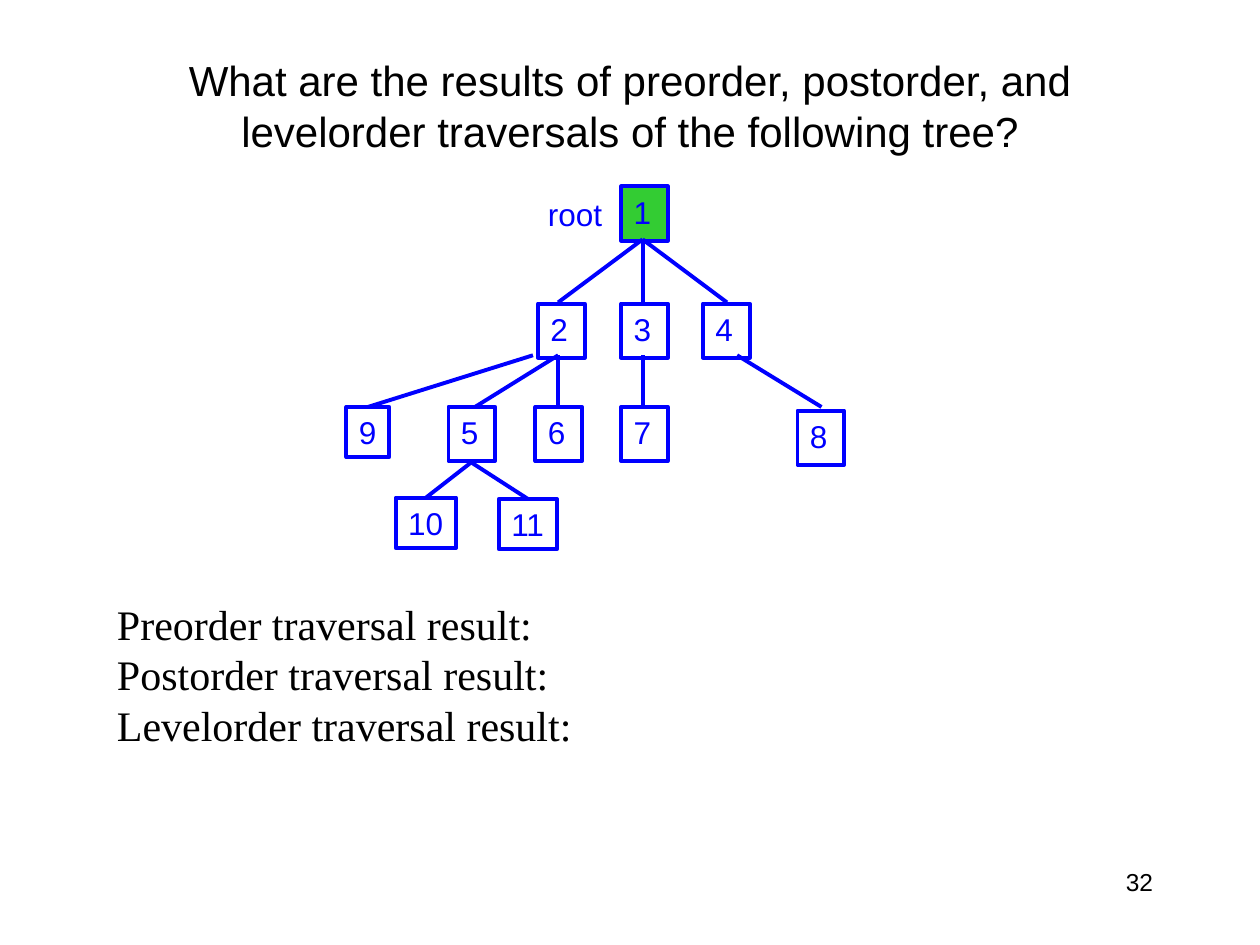
from pptx import Presentation
from pptx.dml.color import RGBColor
from pptx.enum.shapes import MSO_CONNECTOR, MSO_SHAPE
from pptx.enum.text import MSO_ANCHOR, MSO_AUTO_SIZE, PP_ALIGN
from pptx.oxml.ns import qn
from pptx.util import Inches, Pt

RECT = MSO_SHAPE.RECTANGLE
STRAIGHT = MSO_CONNECTOR.STRAIGHT
TOP, MIDDLE = MSO_ANCHOR.TOP, MSO_ANCHOR.MIDDLE
GROW, FIXED = MSO_AUTO_SIZE.SHAPE_TO_FIT_TEXT, MSO_AUTO_SIZE.NONE
LEFT, CENTER, RIGHT = PP_ALIGN.LEFT, PP_ALIGN.CENTER, PP_ALIGN.RIGHT

COLORS = {"text": "000000", "tree": "0000FF", "root": "33CC33"}
SANS, SERIF = "Arial", "Times New Roman"
NODE_W, NODE_H, SMALL_H = 0.37, 0.43, 0.4

NODES = [
    ("1", 4.93, 1.48, NODE_W, NODE_H),
    ("2", 4.27, 2.41, NODE_W, NODE_H),
    ("3", 4.93, 2.41, NODE_W, NODE_H),
    ("4", 5.58, 2.41, NODE_W, NODE_H),
    ("5", 3.56, 3.23, NODE_W, NODE_H),
    ("6", 4.25, 3.23, NODE_W, NODE_H),
    ("7", 4.93, 3.23, NODE_W, NODE_H),
    ("8", 6.33, 3.26, NODE_W, NODE_H),
    ("9", 2.75, 3.23, 0.34, SMALL_H),
    ("10", 3.14, 3.95, 0.48, SMALL_H),
    ("11", 3.96, 3.96, 0.46, SMALL_H),
]

BRANCHES = [
    ((5.1, 1.9), [(4.43, 2.4), (5.1, 2.4), (5.77, 2.4)]),
    ((4.23, 2.82), [(2.92, 3.23)]),
    ((4.43, 2.82), [(3.77, 3.23), (4.43, 3.23)]),
    ((5.1, 2.82), [(5.1, 3.23)]),
    ((5.85, 2.82), [(6.52, 3.23)]),
    ((3.74, 3.67), [(3.38, 3.95), (4.19, 3.96)]),
]


def rgb(name):
    return RGBColor.from_string(COLORS[name])


class TreeSlide:
    def __init__(self, prs):
        self.s = prs.slides.add_slide(prs.slide_layouts[5])
        self.line_width = Pt(2.25)

    def set_text(self, sp, lines, size, color="text", font=SANS, align=LEFT,
                 anchor=TOP, wrap=True, fit=GROW):
        tf = sp.text_frame
        tf.text = "\n".join(lines)
        tf.word_wrap = wrap
        tf.auto_size = fit
        tf.vertical_anchor = anchor
        for p in tf.paragraphs:
            p.alignment = align
            p.font.name = font
            p.font.size = Pt(size)
            p.font.color.rgb = rgb(color)

    def title(self, text, x, y, w, h):
        sp = self.s.shapes.title
        sp.left, sp.top, sp.width, sp.height = map(Inches, (x, y, w, h))
        self.set_text(sp, [text], 24, align=CENTER, anchor=MIDDLE, fit=FIXED)

    def text(self, lines, x, y, w, h, size, **style):
        sp = self.s.shapes.add_textbox(*map(Inches, (x, y, w, h)))
        self.set_text(sp, lines, size, **style)

    def node(self, label, x, y, w, h, fill=None):
        sp = self.s.shapes.add_shape(RECT, *map(Inches, (x, y, w, h)))
        sp.shadow.inherit = False
        if fill:
            sp.fill.solid()
            sp.fill.fore_color.rgb = rgb(fill)
        else:
            sp.fill.background()
        sp.line.color.rgb = rgb("tree")
        sp.line.width = self.line_width
        self.set_text(sp, [label], 18, color="tree", wrap=False)

    def edge(self, start, end):
        c = self.s.shapes.add_connector(STRAIGHT, *map(Inches, start + end))
        c.line.color.rgb = rgb("tree")
        c.line.width = self.line_width
        spPr = c._element.spPr
        spPr.append(spPr.makeelement(qn("a:effectLst"), {}))


def main():
    prs = Presentation()
    prs.slide_width, prs.slide_height = Inches(10), Inches(7.5)
    slide = TreeSlide(prs)
    slide.title("What are the results of preorder, postorder, and levelorder "
                "traversals of the following tree?", 0.75, 0.42, 8.5, 0.83)
    for label, x, y, w, h in NODES:
        slide.node(label, x, y, w, h, fill="root" if label == "1" else None)
    for parent, children in BRANCHES:
        for child in children:
            slide.edge(parent, child)
    slide.text(["root"], 4.25, 1.5, 0.63, 0.4, 18, color="tree", wrap=False)
    slide.text([f"{order} traversal result:"
                for order in ("Preorder", "Postorder", "Levelorder")],
               0.83, 4.7, 8.58, 1.31, 24, font=SERIF)
    slide.text(["32"], 7.17, 6.83, 2.08, 0.5, 14, align=RIGHT, fit=FIXED)
    prs.save("out.pptx")


if __name__ == "__main__":
    main()
